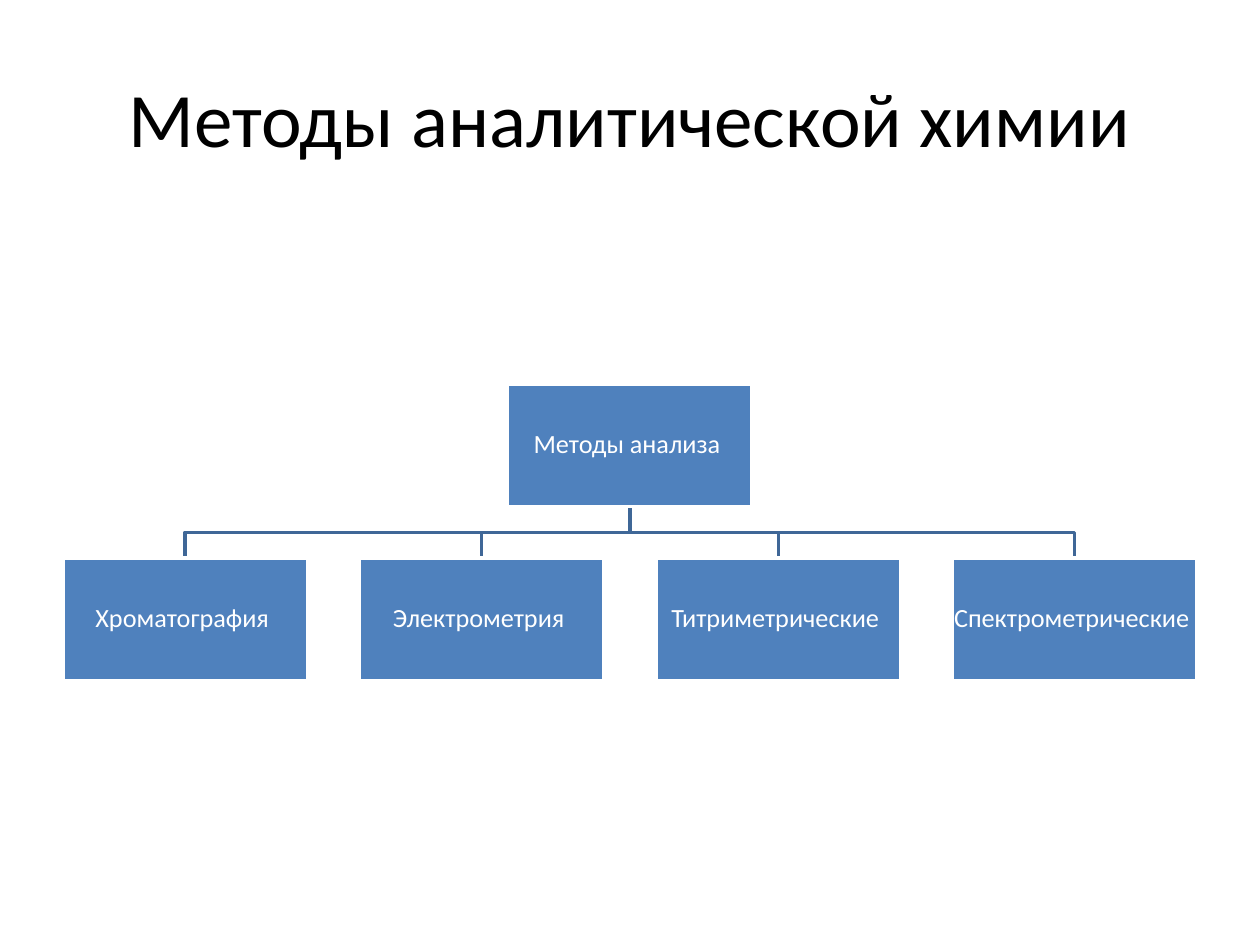
from pptx import Presentation
from pptx.dml.color import RGBColor
from pptx.enum.shapes import MSO_SHAPE
from pptx.enum.text import MSO_ANCHOR, PP_ALIGN
from pptx.util import Inches, Pt

COLORS = {"text": "000000", "box": "4F81BD", "white": "FFFFFF", "branch": "3F6797"}
METHODS = ["Хроматография ", "Электрометрия ", "Титриметрические ", "Спектрометрические "]
BOX_W, BOX_H = 1.94, 0.97


def rgb(name):
    return RGBColor.from_string(COLORS[name])


def write(tf, text, size, color):
    tf.word_wrap = True
    tf.vertical_anchor = MSO_ANCHOR.MIDDLE
    p = tf.paragraphs[0]
    p.alignment = PP_ALIGN.CENTER
    r = p.add_run()
    r.text = text
    r.font.name = "Calibri"
    r.font.size = Pt(size)
    r.font.color.rgb = rgb(color)
    return p


def add_title(s, x, y, w, h):
    tb = s.shapes.add_textbox(Inches(x), Inches(y), Inches(w), Inches(h))
    write(tb.text_frame, "Методы аналитической химии", 44, "text")


def add_box(shapes, text, x, y):
    sp = shapes.add_shape(MSO_SHAPE.RECTANGLE, Inches(x), Inches(y), Inches(BOX_W), Inches(BOX_H))
    sp.shadow.inherit = False
    sp.fill.solid()
    sp.fill.fore_color.rgb = rgb("box")
    sp.line.color.rgb = rgb("white")
    sp.line.width = Pt(2)
    tf = sp.text_frame
    tf.margin_left = tf.margin_right = tf.margin_top = tf.margin_bottom = Inches(0.01)
    p = write(tf, text, 15, "white")
    p.line_spacing = 0.9
    p.space_after = Pt(5.25)


def add_branch(shapes, x1, y1, x2, y2):
    mid = (y1 + y2) / 2
    fb = shapes.build_freeform(Inches(x1), Inches(y1))
    points = [(x1, mid), (x2, mid), (x2, y2)]
    fb.add_line_segments([(Inches(x), Inches(y)) for x, y in points], close=False)
    sp = fb.convert_to_shape()
    sp.shadow.inherit = False
    sp.fill.background()
    sp.line.color.rgb = rgb("branch")
    sp.line.width = Pt(2)


def add_tree(s, x, y, w, h):
    shapes = s.shapes.add_group_shape().shapes
    center = x + w / 2
    row_y = y + h - BOX_H
    step = (w - BOX_W) / (len(METHODS) - 1)
    lefts = [x + i * step for i in range(len(METHODS))]
    for left in reversed(lefts):
        add_branch(shapes, center, y + BOX_H, left + BOX_W / 2, row_y)
    add_box(shapes, "Методы анализа ", center - BOX_W / 2, y)
    for left, text in zip(lefts, METHODS):
        add_box(shapes, text, left, row_y)


def main():
    prs = Presentation()
    prs.slide_width, prs.slide_height = Inches(10), Inches(7.5)
    s = prs.slides.add_slide(prs.slide_layouts[6])
    add_title(s, 0.5, 0.3, 9, 1.25)
    add_tree(s, 0.5, 3.05, 9, 2.35)
    prs.save("out.pptx")


if __name__ == "__main__":
    main()
